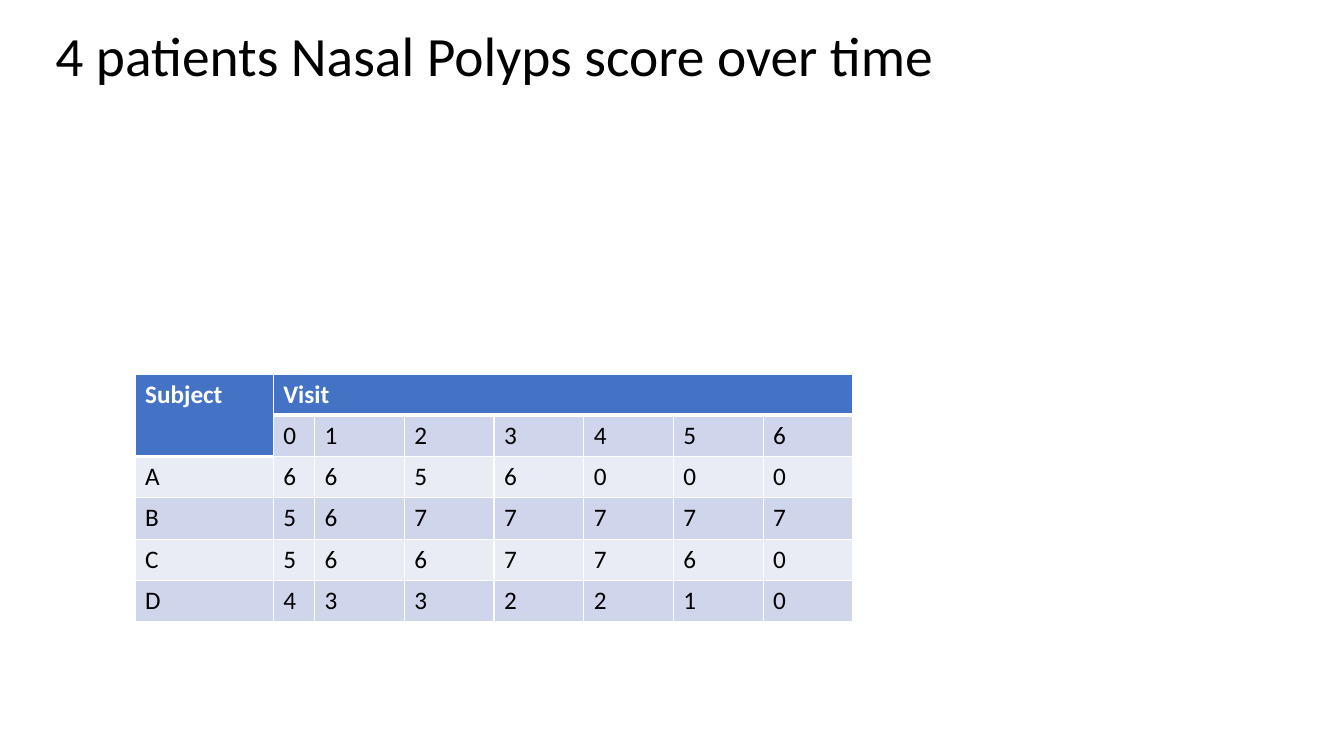
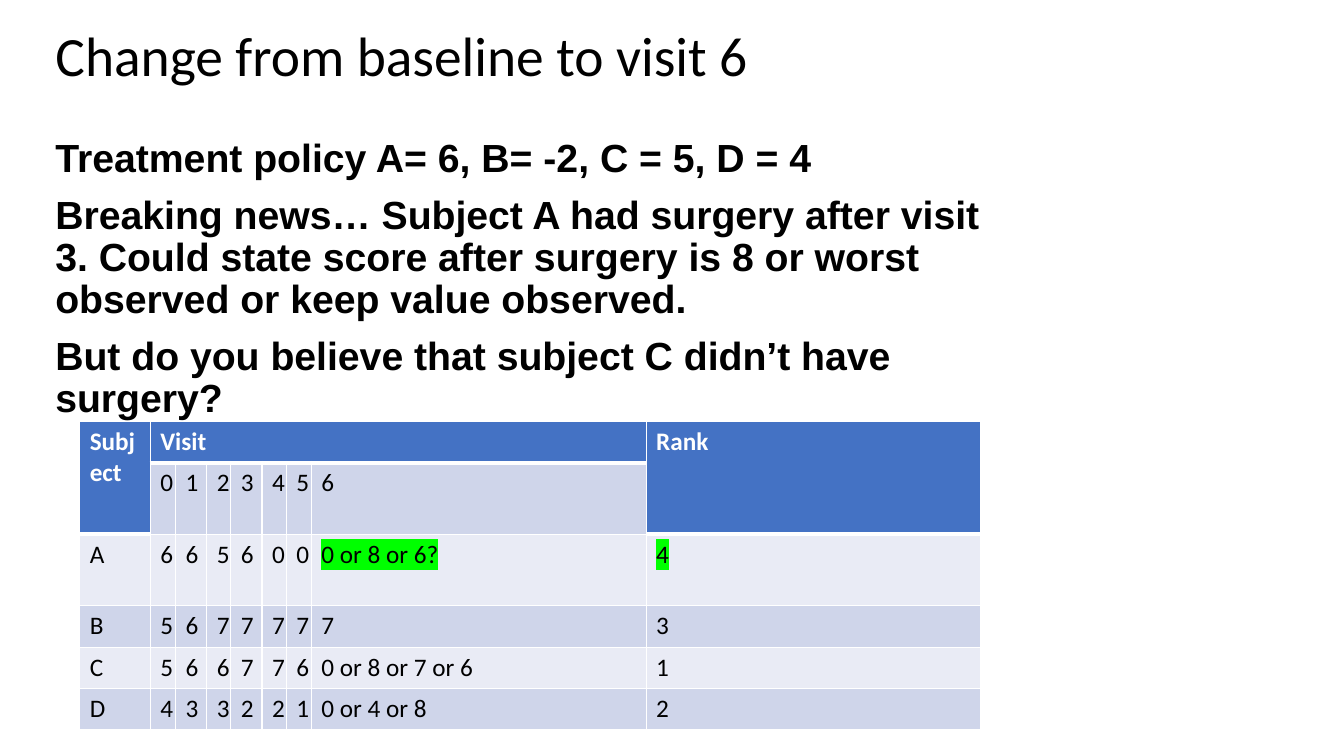
from lxml import etree
from pptx import Presentation
from pptx.dml.color import RGBColor
from pptx.enum.text import MSO_ANCHOR, MSO_AUTO_SIZE, PP_ALIGN
from pptx.oxml.ns import qn
from pptx.util import Pt

TOP, MIDDLE = MSO_ANCHOR.TOP, MSO_ANCHOR.MIDDLE
LEFT = PP_ALIGN.LEFT
NO_FIT = MSO_AUTO_SIZE.NONE
TITLE_ONLY = 5

VISITS = 7
SCORES = {"A": "665600", "B": "567777", "C": "566776", "D": "433221"}


def px(n):
    return n * 9144


def rgb(value):
    return RGBColor.from_string(value)


def add_color(parent, tag, value):
    node = etree.SubElement(parent, qn(tag))
    etree.SubElement(node, qn("a:srgbClr"), val=value)


class Deck:
    BLACK, WHITE = "000000", "FFFFFF"
    HEADER = "4472C4"
    BANDS = ("E9EBF5", "CFD5EA")
    HIGHLIGHT = "00FF00"
    HEADING_FONT, BODY_FONT = "Calibri", "Arial"

    def __init__(self):
        self.prs = Presentation()
        self.prs.slide_width, self.prs.slide_height = px(1333), px(750)
        self.s = None

    def font(self, p, name, size, color, bold=False):
        p.font.name, p.font.size, p.font.bold = name, Pt(size), bold
        p.font.color.rgb = rgb(color)

    def frame(self, sp, anchor):
        tf = sp.text_frame
        tf.word_wrap = True
        tf.auto_size = NO_FIT
        tf.vertical_anchor = anchor
        return tf

    def slide(self, title):
        self.s = self.prs.slides.add_slide(self.prs.slide_layouts[TITLE_ONLY])
        sp = self.s.shapes.title
        sp.left, sp.top, sp.width, sp.height = px(45), px(30), px(1227), px(56)
        p = self.frame(sp, MIDDLE).paragraphs[0]
        p.text = title
        p.alignment = LEFT
        p.line_spacing = 0.9
        self.font(p, self.HEADING_FONT, 39.6, self.BLACK)

    def body(self, x, y, w, h, lines):
        sp = self.s.shapes.add_textbox(px(x), px(y), px(w), px(h))
        tf = self.frame(sp, TOP)
        for i, line in enumerate(lines):
            p = tf.add_paragraph() if i else tf.paragraphs[0]
            p.text = line
            p.line_spacing = 0.9
            p.space_before = Pt(10)
            self.font(p, self.BODY_FONT, 28, self.BLACK, True)

    def borders(self, cell, top, bottom):
        tc_pr = cell._tc.get_or_add_tcPr()
        for side, width in (("L", 1), ("R", 1), ("T", top), ("B", bottom)):
            ln = etree.SubElement(tc_pr, qn("a:ln" + side), w=str(Pt(width)))
            add_color(ln, "a:solidFill", self.WHITE)

    def cell(self, cell, text, header, fill, top, marked):
        self.borders(cell, top, 3 if header else 1)
        cell.fill.solid()
        cell.fill.fore_color.rgb = rgb(fill)
        p = cell.text_frame.paragraphs[0]
        self.font(p, self.HEADING_FONT, 18,
                  self.WHITE if header else self.BLACK, header)
        if text:
            r = p.add_run()
            r.text = text
            if marked:
                add_color(r._r.get_or_add_rPr(), "a:highlight", self.HIGHLIGHT)

    def score_table(self, x, y, widths, heights, last_columns, extra=(), marked=()):
        visits = [str(v) for v in range(VISITS)]
        rows = [["Subject", "Visit"] + [""] * (VISITS - 1) + list(extra),
                [""] + visits + [""] * len(extra)]
        rows += [[name, *SCORES[name], *last]
                 for name, last in zip(SCORES, last_columns)]
        table = self.s.shapes.add_table(
            len(rows), len(widths), px(x), px(y),
            px(sum(widths)), px(sum(heights))).table
        table.horz_banding = False
        for column, width in zip(table.columns, widths):
            column.width = px(width)
        for row, height in zip(table.rows, heights):
            row.height = px(height)
        for i, texts in enumerate(rows):
            for j, text in enumerate(texts):
                header = i == 0 or not text
                below_header = i > 0 and (i == 1 or not rows[i - 1][j])
                fill = self.HEADER if header else self.BANDS[i % 2]
                self.cell(table.cell(i, j), text, header, fill,
                          3 if below_header else 1, (i, j) in marked)
        table.cell(0, 1).merge(table.cell(0, VISITS))
        for j in (0, *range(VISITS + 1, len(widths))):
            table.cell(0, j).merge(table.cell(1, j))


def main():
    deck = Deck()

    deck.slide("4 patients Nasal Polyps score over time")
    deck.score_table(134, 371, [137, 41] + [89] * 6, [41] * 6,
                     [["0"], ["7"], ["0"], ["0"]])

    deck.slide("Change from baseline to visit 6")
    deck.body(45, 133, 978, 484, [
        "Treatment policy A= 6, B= -2, C = 5, D = 4",
        "Breaking news… Subject A had surgery after visit 3. Could state score "
        "after surgery is 8 or worst observed or keep value observed.",
        "But do you believe that subject C didn’t have surgery?",
    ])
    deck.score_table(79, 418, [70, 25, 31, 23, 31, 23, 25, 332, 332],
                     [41, 70, 71, 41, 41, 41],
                     [["0 or 8 or 6?", "4"], ["7", "3"],
                      ["0 or 8 or 7 or 6", "1"], ["0 or 4 or 8", "2"]],
                     extra=["Rank"], marked={(2, 7), (2, 8)})

    deck.prs.save("out.pptx")


if __name__ == "__main__":
    main()
